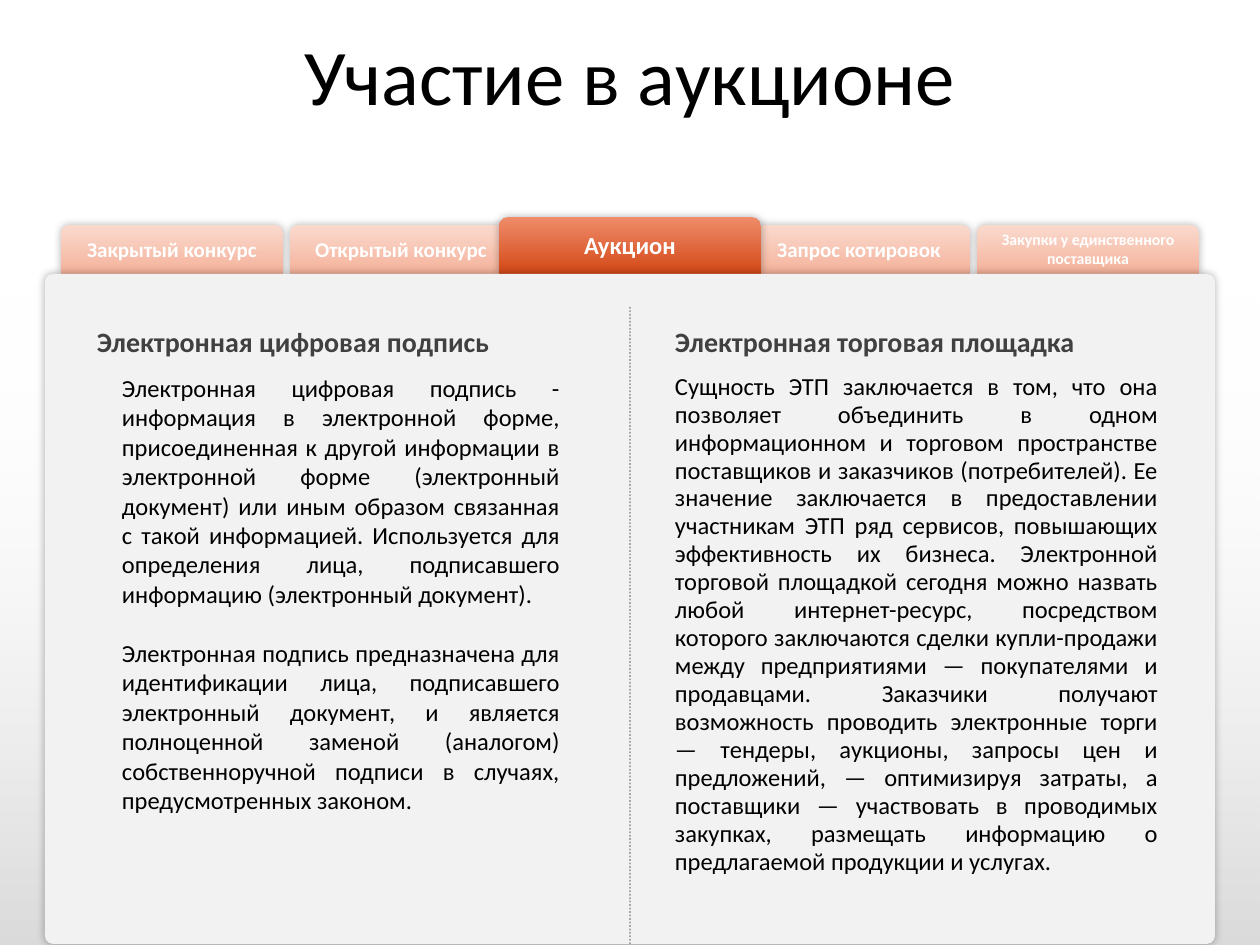
from dataclasses import dataclass

from lxml.etree import SubElement
from pptx import Presentation
from pptx.dml.color import RGBColor
from pptx.enum.dml import MSO_LINE
from pptx.enum.shapes import MSO_CONNECTOR, MSO_SHAPE
from pptx.enum.text import MSO_ANCHOR, MSO_AUTO_SIZE, PP_ALIGN
from pptx.oxml.ns import qn
from pptx.util import Pt

# Content
TITLE = "Участие в аукционе"
TABS = ["Закрытый конкурс", "Открытый конкурс", "Аукцион", "Запрос котировок",
        "Закупки у единственного поставщика"]
ACTIVE_TAB, SMALL_TAB = 2, 4
COLUMNS = [
    {
        "box": (77, 307, 503, 578),
        "heading": "Электронная цифровая подпись",
        "body": [
            "Электронная цифровая подпись - информация в электронной форме, присоединенная к другой "
            "информации в электронной форме (электронный документ) или иным образом связанная с такой "
            "информацией. Используется для определения лица, подписавшего информацию (электронный "
            "документ).",
            "Электронная подпись предназначена для идентификации лица, подписавшего электронный "
            "документ, и является полноценной заменой (аналогом) собственноручной подписи в случаях, "
            "предусмотренных законом.",
        ],
        "body_indent": 25, "body_spacing": 1.0, "body_after": 17,
    },
    {
        "box": (655, 307, 523, 598),
        "heading": "Электронная торговая площадка",
        "body": [
            "Сущность ЭТП заключается в том, что она позволяет объединить в одном информационном и "
            "торговом пространстве поставщиков и заказчиков (потребителей). Ее значение заключается в "
            "предоставлении участникам ЭТП ряд сервисов, повышающих эффективность их бизнеса. "
            "Электронной торговой площадкой сегодня можно назвать любой интернет-ресурс, посредством "
            "которого заключаются сделки купли-продажи между предприятиями — покупателями и "
            "продавцами. Заказчики получают возможность проводить электронные торги — тендеры, "
            "аукционы, запросы цен и предложений, — оптимизируя затраты, а поставщики — участвовать в "
            "проводимых закупках, размещать информацию о предлагаемой продукции и услугах.",
        ],
        "body_indent": 0, "body_spacing": 0.95, "body_after": 8,
    },
]


@dataclass(frozen=True)
class Theme:
    font: str = "Calibri"
    black: str = "000000"
    white: str = "FFFFFF"
    heading: str = "404040"
    panel: str = "F2F2F2"
    divider: str = "A6A6A6"
    tab: tuple = ("FAD9CD", "F4B39B")
    active: tuple = ("EF8C6A", "D34817")
    title_size: int = 45
    heading_size: int = 16
    body_size: int = 14
    active_size: int = 14
    tab_size: int = 12
    small_tab_size: int = 9


THEME = Theme()
PX_PER_INCH = 126
SLIDE_WIDTH, SLIDE_HEIGHT = 1260, 945
PANEL = (45, 274, 1170, 670)
TAB_LEFT, TAB_PITCH, TAB_WIDTH, TAB_HEIGHT = 61, 229, 222, 49
ACTIVE_WIDTH, ACTIVE_HEIGHT = 262, 57


def px(value):
    return round(value * 914400 / PX_PER_INCH)


def color(value):
    return RGBColor.from_string(value)


def set_font(paragraph, size, value, bold=False):
    font = paragraph.font
    font.name, font.size, font.bold = THEME.font, Pt(size), bold
    font.color.rgb = color(value)


def set_frame(frame, insets, anchor):
    frame.word_wrap = True
    frame.auto_size = MSO_AUTO_SIZE.NONE
    frame.vertical_anchor = anchor
    (frame.margin_left, frame.margin_top,
     frame.margin_right, frame.margin_bottom) = map(px, insets)


def add_block(slide, kind, box):
    shape = slide.shapes.add_shape(kind, *map(px, box))
    shape.line.fill.background()
    shape.shadow.inherit = False
    return shape


def fill_gradient(shape, colors, angle):
    shape.fill.gradient()
    shape.fill.gradient_angle = angle
    for stop, value in zip(shape.fill.gradient_stops, colors):
        stop.color.rgb = color(value)


def add_glow_shadow(shape):
    effects = shape._element.spPr.find(qn("a:effectLst"))
    shadow = SubElement(effects, qn("a:outerShdw"), blurRad=str(Pt(5)), dist="0", dir="0",
                        algn="ctr", rotWithShape="0")
    black = SubElement(shadow, qn("a:srgbClr"), val=THEME.black)
    SubElement(black, qn("a:alpha"), val="31000")


def add_background(slide):
    shade = add_block(slide, MSO_SHAPE.RECTANGLE, (0, 278, SLIDE_WIDTH, SLIDE_HEIGHT - 278))
    fill_gradient(shade, (THEME.black, THEME.white), 90)
    stops = shade._element.spPr.iter(qn("a:srgbClr"))
    for stop, opacity in zip(list(stops), (15000, 0)):
        SubElement(stop, qn("a:alpha"), val=str(opacity))
    # Keep the shade behind the title placeholder
    slide.shapes._spTree.insert(2, shade._element)


def add_title(slide):
    title = slide.shapes.title
    title.left, title.top, title.width, title.height = map(px, (63, 38, 1134, 72))
    set_frame(title.text_frame, (0, 0, 0, 0), MSO_ANCHOR.MIDDLE)
    title.text_frame.text = TITLE
    paragraph = title.text_frame.paragraphs[0]
    paragraph.alignment = PP_ALIGN.CENTER
    set_font(paragraph, THEME.title_size, THEME.black)


def add_tab(slide, index):
    active = index == ACTIVE_TAB
    width, height = (ACTIVE_WIDTH, ACTIVE_HEIGHT) if active else (TAB_WIDTH, TAB_HEIGHT)
    center = TAB_LEFT + index * TAB_PITCH + TAB_WIDTH / 2
    tab = add_block(slide, MSO_SHAPE.ROUND_2_SAME_RECTANGLE,
                    (center - width / 2, PANEL[1] - height, width, height))
    fill_gradient(tab, THEME.active if active else THEME.tab, 270)
    add_glow_shadow(tab)
    set_frame(tab.text_frame, (13, 6, 13, 10), MSO_ANCHOR.MIDDLE)
    tab.text_frame.text = TABS[index]
    paragraph = tab.text_frame.paragraphs[0]
    paragraph.alignment = PP_ALIGN.CENTER
    size = {ACTIVE_TAB: THEME.active_size, SMALL_TAB: THEME.small_tab_size}.get(index, THEME.tab_size)
    set_font(paragraph, size, THEME.white, bold=True)


def add_panel(slide):
    panel = add_block(slide, MSO_SHAPE.ROUNDED_RECTANGLE, PANEL)
    panel.adjustments[0] = 0.012
    panel.fill.solid()
    panel.fill.fore_color.rgb = color(THEME.panel)
    add_glow_shadow(panel)
    middle = SLIDE_WIDTH / 2
    divider = slide.shapes.add_connector(MSO_CONNECTOR.STRAIGHT, px(middle), px(307),
                                         px(middle), px(PANEL[1] + PANEL[3]))
    divider.end_connect(panel, 2)
    divider.line.color.rgb = color(THEME.divider)
    divider.line.width = Pt(1)
    divider.line.dash_style = MSO_LINE.ROUND_DOT
    SubElement(divider._element.spPr, qn("a:effectLst"))


def add_column(slide, column):
    frame = slide.shapes.add_textbox(*map(px, column["box"])).text_frame
    set_frame(frame, (20, 20, 20, 20), MSO_ANCHOR.TOP)
    heading = frame.paragraphs[0]
    heading.text = column["heading"]
    heading.line_spacing, heading.space_after = 0.95, Pt(8)
    set_font(heading, THEME.heading_size, THEME.heading, bold=True)
    for text in column["body"]:
        paragraph = frame.add_paragraph()
        paragraph.text = text
        paragraph.alignment = PP_ALIGN.JUSTIFY
        paragraph.line_spacing = column["body_spacing"]
        paragraph.space_after = Pt(column["body_after"])
        paragraph._p.get_or_add_pPr().set("marL", str(px(column["body_indent"])))
        set_font(paragraph, THEME.body_size, THEME.black)


def main():
    presentation = Presentation()
    presentation.slide_width, presentation.slide_height = px(SLIDE_WIDTH), px(SLIDE_HEIGHT)
    slide = presentation.slides.add_slide(presentation.slide_layouts[5])
    add_background(slide)
    add_title(slide)
    # The active tab overlaps its neighbours, so it comes last
    for index in sorted(range(len(TABS)), key=lambda number: number == ACTIVE_TAB):
        add_tab(slide, index)
    add_panel(slide)
    for column in COLUMNS:
        add_column(slide, column)
    presentation.save("out.pptx")


if __name__ == "__main__":
    main()
